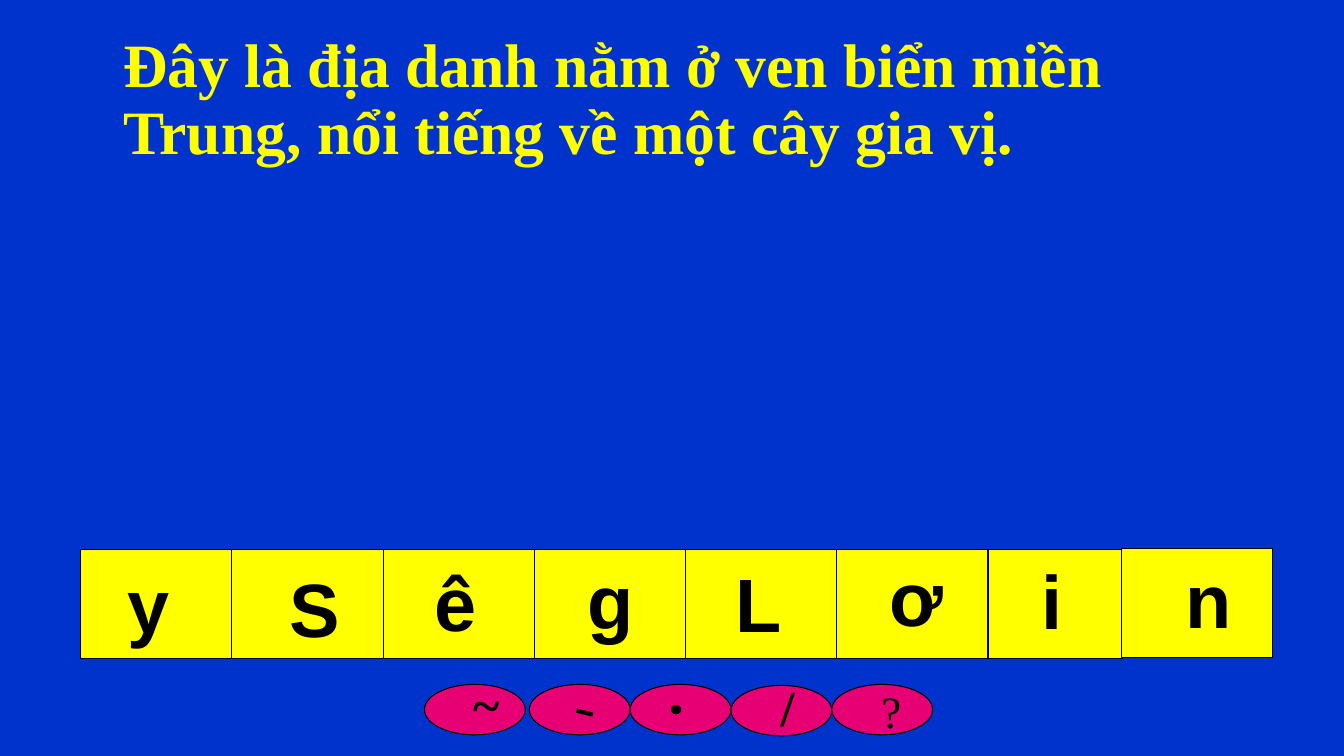
from lxml import etree
from pptx import Presentation
from pptx.dml.color import RGBColor
from pptx.enum.shapes import MSO_CONNECTOR, MSO_SHAPE
from pptx.enum.text import MSO_ANCHOR, MSO_AUTO_SIZE, PP_ALIGN
from pptx.oxml.ns import qn
from pptx.util import Inches, Pt

COLORS = {"blue": "0033CC", "yellow": "FFFF00", "pink": "E60073", "black": "000000"}
SERIF = "Times New Roman"


def write(box, text, size, font="Arial", color="black", bold=True,
          align=PP_ALIGN.CENTER, wrap=True, fit=MSO_AUTO_SIZE.SHAPE_TO_FIT_TEXT):
    frame = box.text_frame
    frame.word_wrap = wrap
    frame.auto_size = fit
    para = frame.paragraphs[0]
    para.alignment = align
    span = para.add_run()
    span.text = text
    span.font.name = font
    span.font.size = Pt(size)
    span.font.bold = bold
    span.font.color.rgb = RGBColor.from_string(COLORS[color])
    return para


def add_outlined(kind, left, top, width, height, fill, line_width=0.75):
    shape = page.shapes.add_shape(
        kind, Inches(left), Inches(top), Inches(width), Inches(height))
    shape.shadow.inherit = False
    shape.fill.solid()
    shape.fill.fore_color.rgb = RGBColor.from_string(COLORS[fill])
    shape.line.color.rgb = RGBColor.from_string(COLORS["black"])
    shape.line.width = Pt(line_width)


deck = Presentation()
deck.slide_width = Inches(13.33)
deck.slide_height = Inches(7.5)
page = deck.slides.add_slide(deck.slide_layouts[5])
page.background.fill.solid()
page.background.fill.fore_color.rgb = RGBColor.from_string(COLORS["blue"])

# Question
title = page.shapes.title
title.left, title.top = Inches(1.12), Inches(0.28)
title.width, title.height = Inches(11.5), Inches(1.45)
title.text_frame.vertical_anchor = MSO_ANCHOR.MIDDLE
question = write(
    title, "Đây là địa danh nằm ở ven biển miền Trung, nổi tiếng về một cây gia vị.",
    44, font=SERIF, color="yellow", align=PP_ALIGN.LEFT, fit=MSO_AUTO_SIZE.NONE)
question.line_spacing = 0.9

# Letter tiles: the seventh lies under both of its neighbours
add_outlined(MSO_SHAPE.RECTANGLE, 9.63, 5.45, 1.5, 1.08, "yellow")
for column in reversed(range(6)):
    add_outlined(MSO_SHAPE.RECTANGLE, 0.8 + 1.5 * column, 5.45, 1.5, 1.08, "yellow")
add_outlined(MSO_SHAPE.RECTANGLE, 11.12, 5.44, 1.5, 1.08, "yellow")

letters = [
    ("y", 1.16, 5.49, 0.62), ("S", 2.77, 5.53, 0.71),
    ("ê", 4.21, 5.47, 0.62), ("g", 5.73, 5.45, 0.66),
    ("L", 7.19, 5.48, 0.66), ("ơ", 8.72, 5.42, 0.74),
    ("i", 10.23, 5.45, 0.41), ("n", 11.66, 5.44, 0.66),
]
for letter, left, top, width in letters:
    box = page.shapes.add_textbox(Inches(left), Inches(top), Inches(width), Inches(1.01))
    write(box, letter, 54, wrap=False)

# Tone marks
for left, top in [(4.21, 6.79), (5.25, 6.79), (6.25, 6.79), (7.25, 6.8), (8.25, 6.79)]:
    add_outlined(MSO_SHAPE.OVAL, left, top, 1, 0.5, "pink")

grave = page.shapes.add_connector(
    MSO_CONNECTOR.STRAIGHT, Inches(5.72), Inches(7.05), Inches(5.88), Inches(7.09))
grave.line.color.rgb = RGBColor.from_string(COLORS["black"])
grave.line.width = Pt(3)
etree.SubElement(grave._element.spPr, qn("a:effectLst"))

add_outlined(MSO_SHAPE.OVAL, 6.66, 7, 0.09, 0.08, "black", line_width=1)

marks = [
    ("~", 4.62, 6.63, 0.71, 36, True),
    ("/", 7.67, 6.66, 0.71, 36, True),
    ("?", 8.67, 6.73, 0.64, 32, False),
]
for mark, left, top, height, size, bold in marks:
    box = page.shapes.add_textbox(Inches(left), Inches(top), Inches(0.17), Inches(height))
    write(box, mark, size, font=SERIF, bold=bold)

deck.save("out.pptx")
